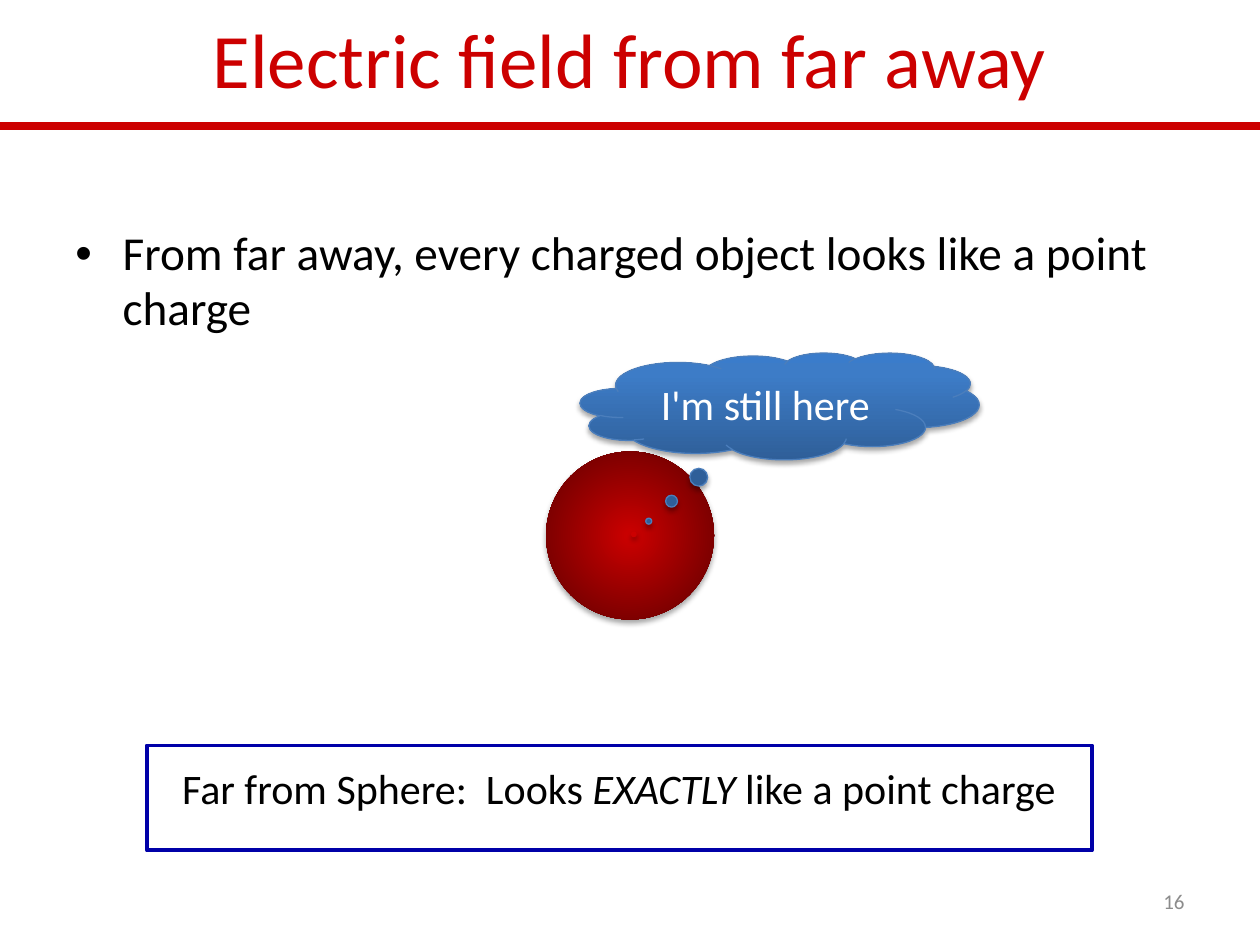
from dataclasses import dataclass

import lxml.etree
import pptx
import pptx.dml.color
import pptx.enum.shapes
import pptx.enum.text
import pptx.oxml.ns
import pptx.util

Pt = pptx.util.Pt
Shape = pptx.enum.shapes.MSO_SHAPE
Align = pptx.enum.text.PP_ALIGN
Anchor = pptx.enum.text.MSO_ANCHOR
qn = pptx.oxml.ns.qn


@dataclass(frozen=True)
class Theme:
    """Colours, type sizes and gradients of the slide."""
    font: str = "Calibri"
    red: str = "CC0000"
    black: str = "000000"
    white: str = "FFFFFF"
    grey: str = "8C8C8C"
    frame: str = "0000A8"
    cloud_line: str = "4B7EBC"
    sphere_stops: tuple = ((0, "CC0000"), (100, "5E0000"))
    cloud_stops: tuple = ((0, "2F5F99"), (80, "3D7CC7"), (100, "3A7CCB"))
    title_size: float = 44
    body_size: float = 27
    label_size: float = 24
    number_size: float = 12


THEME = Theme()


def rgb(color):
    """Turn a hex string into a colour."""
    return pptx.dml.color.RGBColor.from_string(color)


def add_child(parent, tag, **attributes):
    """Append a drawing element with the given attributes."""
    child = lxml.etree.SubElement(parent, qn(tag))
    for name, value in attributes.items():
        child.set(name, str(value))
    return child


def write_text(shape, runs, size, color, align=Align.LEFT, anchor=Anchor.TOP):
    """Write (text, italic) runs into the shape's only paragraph."""
    frame = shape.text_frame
    frame.word_wrap = True
    frame.vertical_anchor = anchor
    paragraph = frame.paragraphs[0]
    paragraph.alignment = align
    for text, italic in runs:
        run = paragraph.add_run()
        run.text = text
        run.font.name = THEME.font
        run.font.size = Pt(size)
        run.font.italic = italic
        run.font.color.rgb = rgb(color)
    return paragraph


def add_text(slide, box, *text_options):
    """Add a text box and return its paragraph."""
    textbox = slide.shapes.add_textbox(*map(Pt, box))
    return write_text(textbox, *text_options)


def add_figure(slide, kind, box, line=None, width=0.75):
    """Add an unfilled preset shape without a shadow."""
    shape = slide.shapes.add_shape(kind, *map(Pt, box))
    shape.shadow.inherit = False
    shape.fill.background()
    if line:
        shape.line.color.rgb = rgb(line)
        shape.line.width = Pt(width)
    else:
        shape.line.fill.background()
    return shape


def set_gradient(shape, stops, angle=None):
    """Fill with a linear gradient, or a centred circular one without angle."""
    shape.fill.gradient()
    gradient = shape.element.spPr.find(qn("a:gradFill"))
    for child in list(gradient):
        gradient.remove(child)
    stop_list = add_child(gradient, "a:gsLst")
    for position, color in stops:
        stop = add_child(stop_list, "a:gs", pos=position * 1000)
        add_child(stop, "a:srgbClr", val=color)
    if angle is None:
        circle = add_child(gradient, "a:path", path="circle")
        add_child(circle, "a:fillToRect", l=50000, t=50000, r=50000, b=50000)
    else:
        add_child(gradient, "a:lin", ang=angle * 60000, scaled=0)


def add_shadow(shape):
    """Give the shape a soft shadow below it."""
    effects = shape.element.spPr.find(qn("a:effectLst"))
    shadow = add_child(effects, "a:outerShdw", blurRad=Pt(3.1), dist=Pt(1.8),
                       dir=90 * 60000, rotWithShape=0)
    color = add_child(shadow, "a:srgbClr", val=THEME.black)
    add_child(color, "a:alpha", val=35000)


def add_header(slide, left, top, width, height):
    """Place the title over a rule that spans the slide."""
    add_text(slide, (left + 36, top - 12, width - 72, 90),
             [("Electric field from far away", False)],
             THEME.title_size, THEME.red, Align.CENTER, Anchor.MIDDLE)
    rule = slide.shapes.add_connector(
        pptx.enum.shapes.MSO_CONNECTOR.STRAIGHT,
        Pt(left), Pt(top + height), Pt(left + width), Pt(top + height))
    rule.line.color.rgb = rgb(THEME.red)
    rule.line.width = Pt(5)
    add_child(rule.element.spPr, "a:effectLst")


def add_body(slide, *box):
    """Place the bulleted statement."""
    paragraph = add_text(
        slide, box,
        [("From far away, every charged object looks like a point charge", False)],
        THEME.body_size, THEME.black)
    paragraph.space_before = Pt(3)
    paragraph.line_spacing = 0.97
    properties = paragraph._p.get_or_add_pPr()
    properties.set("marL", str(Pt(27)))
    properties.set("indent", str(-Pt(27)))
    add_child(properties, "a:buFont", typeface="Arial")
    add_child(properties, "a:buChar", char="•")


def add_sphere_scene(slide, left, top, width, height):
    """Place the charged sphere, its centre point and the thought cloud."""
    diameter = 96
    sphere = add_figure(slide, Shape.OVAL,
                        (left, top + height - diameter, diameter, diameter))
    set_gradient(sphere, THEME.sphere_stops)
    point = add_figure(slide, Shape.OVAL,
                       (left + 49, top + 102.5, 2.5, 2.5), THEME.red)
    point.fill.solid()
    point.fill.fore_color.rgb = rgb(THEME.red)
    cloud = add_figure(slide, Shape.CLOUD_CALLOUT,
                       (left + 19.5, top, width - 19.5, 61), THEME.cloud_line)
    cloud.adjustments[0] = -0.328
    cloud.adjustments[1] = 1.078
    set_gradient(cloud, THEME.cloud_stops, 270)
    write_text(cloud, [("I'm still here", False)], THEME.label_size,
               THEME.white, Align.CENTER, Anchor.MIDDLE)
    for shape in (sphere, point, cloud):
        add_shadow(shape)


def add_conclusion(slide, left, top, width, height):
    """Place the framed conclusion."""
    add_text(slide, (left + 13, top + 6, width + 16.5, height + 5.5),
             [("Far from Sphere:  Looks ", False), ("EXACTLY ", True),
              ("like a point charge", False)],
             THEME.label_size, THEME.black)
    add_figure(slide, Shape.RECTANGLE, (left, top, width, height),
               THEME.frame, 2.25)


def add_page_number(slide, *box):
    """Place the slide number."""
    add_text(slide, box, [("16", False)], THEME.number_size, THEME.grey,
             Align.RIGHT, Anchor.MIDDLE)


def main():
    """Build and save the slide."""
    presentation = pptx.Presentation()
    presentation.slide_width = Pt(720)
    presentation.slide_height = Pt(540)
    slide = presentation.slides.add_slide(presentation.slide_layouts[6])
    add_header(slide, 0, 0, 720, 72)
    add_body(slide, 36, 126, 648, 270)
    add_sphere_scene(slide, 312, 201.6, 247.5, 152.4)
    add_conclusion(slide, 84, 426, 540, 60)
    add_page_number(slide, 516, 500.5, 168, 28.75)
    presentation.save("out.pptx")


if __name__ == "__main__":
    main()
